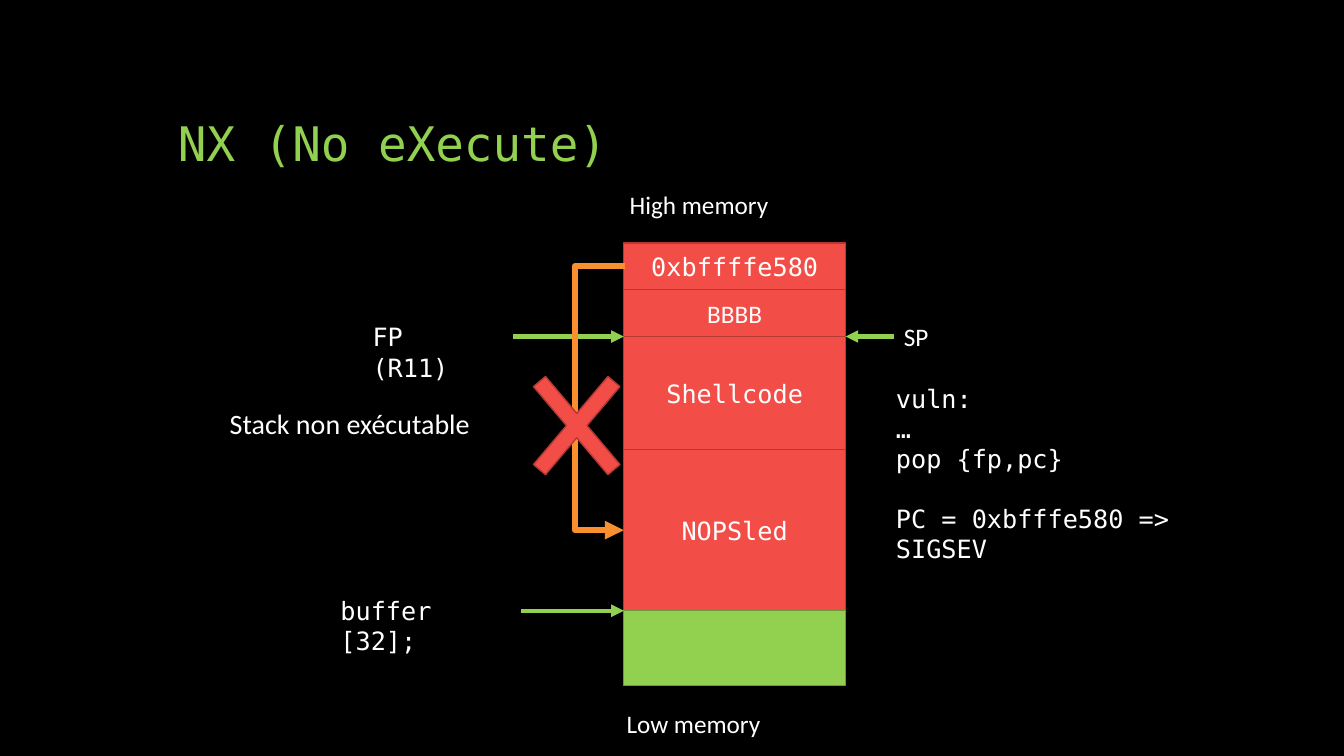
from lxml.etree import SubElement
from pptx import Presentation
from pptx.dml.color import RGBColor
from pptx.enum.shapes import MSO_CONNECTOR as LINE, MSO_SHAPE as SHAPE
from pptx.enum.text import MSO_ANCHOR as ANCHOR, MSO_AUTO_SIZE as FIT, PP_ALIGN as ALIGN
from pptx.oxml.ns import qn
from pptx.util import Cm, Pt

COLORS = {
    "black": "000000", "white": "FFFFFF", "orange": "FA8F30",
    "green": "92D050", "green_edge": "6C9A3B",
    "red": "F34D47", "red_edge": "B43935",
}
MONO, SANS = "DejaVu Sans Mono", "Calibri"


def rgb(name):
    return RGBColor.from_string(COLORS[name])


def style_text(tf, font, size, color="white", align=ALIGN.LEFT):
    for p in tf.paragraphs:
        p.alignment = align
        for r in p.runs:
            r.font.name = font
            r.font.size = Pt(size)
            r.font.color.rgb = rgb(color)


prs = Presentation()
prs.slide_width, prs.slide_height = Cm(33.87), Cm(19.05)
s = prs.slides.add_slide(prs.slide_layouts[5])
s.background.fill.solid()
s.background.fill.fore_color.rgb = rgb("black")

title = s.shapes.title
title.left, title.top, title.width, title.height = Cm(4.23), Cm(1.27), Cm(25.4), Cm(3.18)
tf = title.text_frame
tf.text = "NX (No eXecute)"
tf.vertical_anchor = ANCHOR.BOTTOM
tf.paragraphs[0].line_spacing = 0.9
style_text(tf, MONO, 34, "green")

stack_left, stack_width, stack_top = 15.72, 5.59, 6.12
segments = [
    ("0xbffffe580", 1.18, MONO, "red"),
    ("BBBB", 1.18, SANS, "red"),
    ("Shellcode", 2.85, MONO, "red"),
    ("NOPSled", 4.06, MONO, "red"),
    ("", 1.88, MONO, "green"),
]
blocks = []
top = stack_top
for text, height, font, color in segments:
    block = s.shapes.add_shape(SHAPE.RECTANGLE, Cm(stack_left), Cm(top), Cm(stack_width), Cm(height))
    block.text_frame.text = text
    block.text_frame.vertical_anchor = ANCHOR.MIDDLE
    style_text(block.text_frame, font, 18, align=ALIGN.CENTER)
    blocks.append((block, color))
    top += height

labels = [
    ("High memory", 15.62, 4.65, 5.79, 1.02, SANS, 18),
    ("Low memory", 15.54, 17.73, 5.79, 1.02, SANS, 18),
    ("FP (R11)", 9.14, 7.98, 3.38, 1.02, MONO, 18),
    ("SP", 22.53, 7.98, 1.4, 1.02, SANS, 18),
    ("buffer [32];", 8.33, 14.88, 4.8, 1.02, MONO, 18),
    ("Stack non exécutable", 5.54, 10.13, 8.1, 1.12, SANS, 20),
    ("vuln:\n…\npop {fp,pc}\nPC = 0xbfffe580 => SIGSEV", 22.33, 9.53, 9.19, 4.88, MONO, 18),
]
for text, left, top, width, height, font, size in labels:
    tf = s.shapes.add_textbox(Cm(left), Cm(top), Cm(width), Cm(height)).text_frame
    tf.word_wrap = True
    tf.auto_size = FIT.SHAPE_TO_FIT_TEXT
    tf.text = text
    style_text(tf, font, size)
tf.paragraphs[-1].space_before = Pt(21)

stack_right = stack_left + stack_width
arrows = [
    (LINE.STRAIGHT, 12.93, 8.48, stack_left, 8.48, "green", 3),
    (LINE.STRAIGHT, 22.53, 8.48, stack_right, 8.48, "green", 3),
    (LINE.STRAIGHT, 13.13, 15.39, stack_left, 15.39, "green", 3),
    (LINE.ELBOW, 15.76, 6.71, stack_left, 13.36, "orange", 4.5),
]
for kind, x1, y1, x2, y2, color, weight in arrows:
    arrow = s.shapes.add_connector(kind, Cm(x1), Cm(y1), Cm(x2), Cm(y2))
    arrow.line.color.rgb = rgb(color)
    arrow.line.width = Pt(weight)
    SubElement(arrow.line._get_or_add_ln(), qn("a:tailEnd"), type="triangle")
    sp_pr = arrow._element.spPr
    SubElement(sp_pr, qn("a:effectLst"))
    if kind == LINE.ELBOW:
        bend = sp_pr.find(qn("a:prstGeom")).find(qn("a:avLst"))
        SubElement(bend, qn("a:gd"), name="adj1", fmla="val 3175000")

cross = s.shapes.add_shape(SHAPE.MATH_MULTIPLY, Cm(12.73), Cm(8.59), Cm(3.61), Cm(4.27))
cross.adjustments[0] = 0.11
blocks.append((cross, "red"))

for shape, color in blocks:
    shape.shadow.inherit = False
    shape.fill.solid()
    shape.fill.fore_color.rgb = rgb(color)
    shape.line.color.rgb = rgb(color + "_edge")
    shape.line.width = Pt(1)

prs.save("out.pptx")
